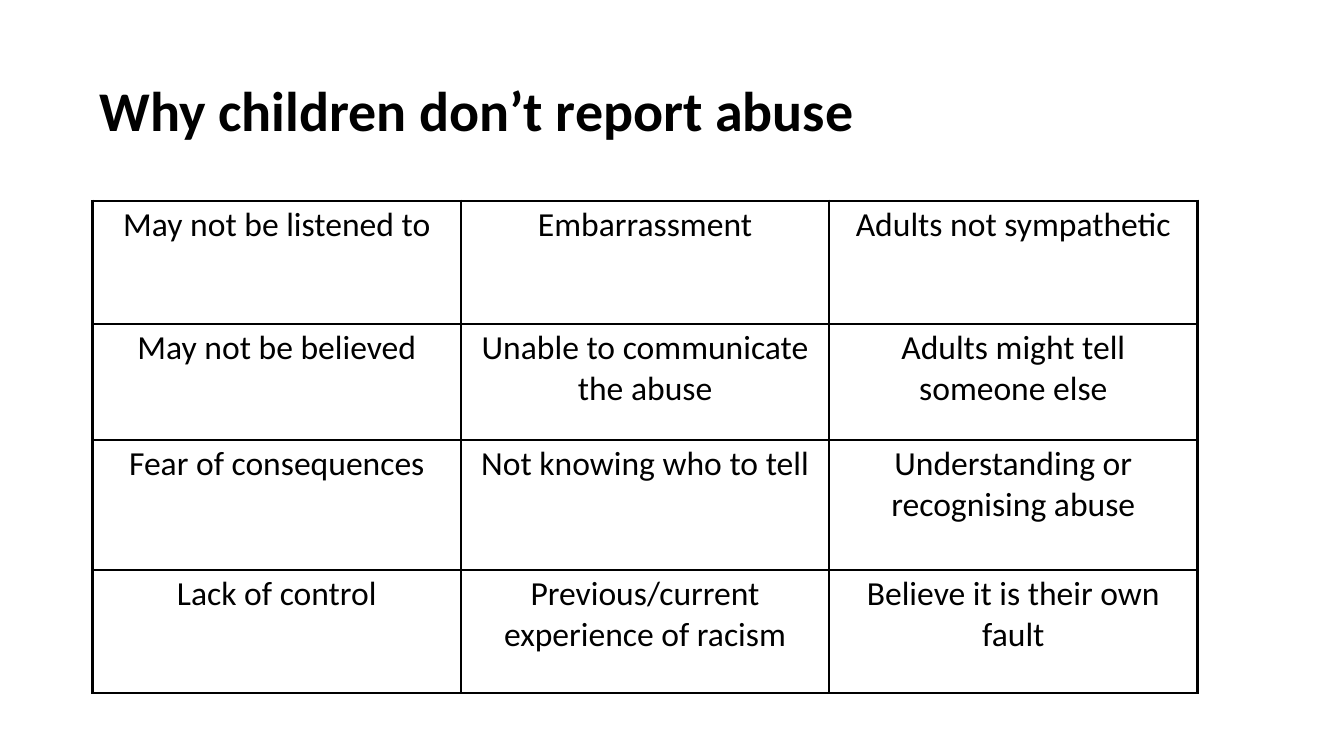
from lxml import etree
from pptx import Presentation
from pptx.dml.color import RGBColor
from pptx.enum.text import MSO_ANCHOR, PP_ALIGN
from pptx.oxml.ns import qn
from pptx.util import Inches, Pt

MIDDLE = MSO_ANCHOR.MIDDLE
CENTER = PP_ALIGN.CENTER

# Content
TITLE = "Why children don’t report abuse"
REASONS = [
    ["May not be listened to", "Embarrassment", "Adults not sympathetic"],
    ["May not be believed", "Unable to communicate the abuse",
     "Adults might tell someone else"],
    ["Fear of consequences", "Not knowing who to tell",
     "Understanding or recognising abuse"],
    ["Lack of control", "Previous/current experience of racism",
     "Believe it is their own fault"],
]

# Style and layout
COLORS = {"ink": "000000", "paper": "FFFFFF"}
FONT = "Calibri"
LEFT = 1.38
TABLE_TOP = 2.99
COL_WIDTH = 5.48
ROW_HEIGHTS = [1.83, 1.73, 1.93, 1.83]
BORDER = Pt(3)


def format_text(p, size, bold=False):
    for r in p.runs:
        r.font.name = FONT
        r.font.size = Pt(size)
        r.font.bold = bold
        r.font.color.rgb = RGBColor.from_string(COLORS["ink"])


def add_space_before(p, percent):
    before = etree.SubElement(p._p.get_or_add_pPr(), qn("a:spcBef"))
    etree.SubElement(before, qn("a:spcPct"), val=str(percent * 1000))


def add_borders(cell):
    tcPr = cell._tc.get_or_add_tcPr()
    for i, side in enumerate(("lnL", "lnR", "lnT", "lnB")):
        ln = etree.Element(qn(f"a:{side}"), w=str(BORDER))
        fill = etree.SubElement(ln, qn("a:solidFill"))
        etree.SubElement(fill, qn("a:srgbClr"), val=COLORS["ink"])
        tcPr.insert(i, ln)


prs = Presentation()
prs.slide_width, prs.slide_height = Inches(20), Inches(11.22)
s = prs.slides.add_slide(prs.slide_layouts[6])

# Title
sp = s.shapes.add_textbox(Inches(LEFT), Inches(0.6), Inches(17.25), Inches(2.17))
tf = sp.text_frame
tf.word_wrap = True
tf.vertical_anchor = MIDDLE
tf.text = TITLE
p = tf.paragraphs[0]
p.line_spacing = 0.9
format_text(p, 60, bold=True)

# Table of reasons
cols = len(REASONS[0])
table = s.shapes.add_table(
    len(REASONS), cols, Inches(LEFT), Inches(TABLE_TOP),
    Inches(COL_WIDTH * cols), Inches(sum(ROW_HEIGHTS))).table
table.first_row = table.horz_banding = False
for col in table.columns:
    col.width = Inches(COL_WIDTH)
for row, height, reasons in zip(table.rows, ROW_HEIGHTS, REASONS):
    row.height = Inches(height)
    for cell, reason in zip(row.cells, reasons):
        cell.text = reason
        cell.margin_left = cell.margin_right = Inches(0.1)
        cell.margin_top = cell.margin_bottom = Inches(0.05)
        cell.fill.solid()
        cell.fill.fore_color.rgb = RGBColor.from_string(COLORS["paper"])
        add_borders(cell)
        p = cell.text_frame.paragraphs[0]
        p.alignment = CENTER
        add_space_before(p, 20)
        format_text(p, 36)

prs.save("out.pptx")
